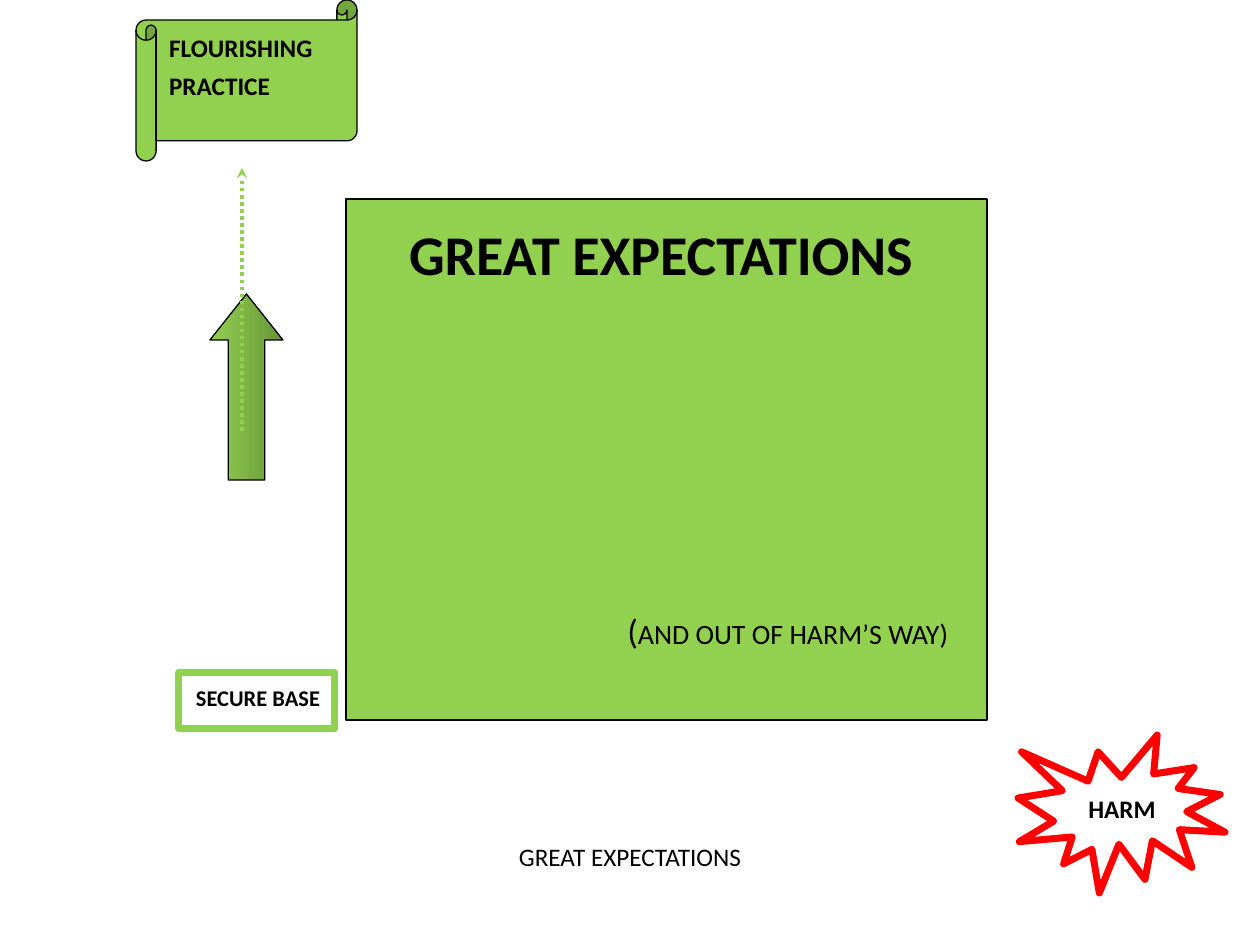
"""Build the Great Expectations slide: a path from a secure base to flourishing practice."""
from dataclasses import dataclass

from lxml.etree import SubElement
from pptx import Presentation
from pptx.dml.color import RGBColor
from pptx.enum.dml import MSO_LINE
from pptx.enum.shapes import MSO_CONNECTOR, MSO_SHAPE
from pptx.enum.text import MSO_ANCHOR, PP_ALIGN
from pptx.oxml.ns import qn
from pptx.util import Emu, Pt


@dataclass(frozen=True)
class Theme:
    font: str = "Calibri"
    green: str = "92D050"
    dark_green: str = "689539"
    red: str = "FF0000"
    white: str = "FFFFFF"
    black: str = "000000"
    title: int = 40
    bracket: int = 20
    label: int = 18
    base: int = 16
    thin: float = 0.75
    thick: int = 4
    dotted: int = 2


THEME = Theme()
EMU_PER_PX = 914400 / 126
SLIDE_SIZE = (1260, 945)
INSET = 13
AFTER = 10

BOLD_SMALL = {"bold": True, "small": True}
SMALL = {"bold": False, "small": True}
PLAIN = {"bold": False, "small": False}

SCROLL = {
    "kind": MSO_SHAPE.HORIZONTAL_SCROLL, "box": (136, 0, 221, 161),
    "fill": THEME.green, "line": (THEME.black, THEME.thin),
    "paragraphs": [{"runs": [("flourishing practice", THEME.label, BOLD_SMALL)]}],
}
SECURE_BASE = {
    "kind": MSO_SHAPE.RECTANGLE, "box": (179, 672, 156, 57),
    "fill": THEME.white, "line": (THEME.green, THEME.thick), "insets": (17, INSET),
    "paragraphs": [{"runs": [("secure base", THEME.base, BOLD_SMALL)]}],
}
UP_ARROW = {
    "kind": MSO_SHAPE.UP_ARROW, "box": (210, 294, 73, 186),
    "adjustments": (0.5, 0.63), "gradient": (THEME.green, THEME.dark_green),
    "line": (THEME.black, THEME.thin),
}
HARM = {
    "kind": MSO_SHAPE.EXPLOSION1, "box": (1018, 735, 207, 158),
    "fill": THEME.white, "line": (THEME.red, THEME.thick), "insets": (26, INSET),
    "paragraphs": [{"runs": [("harm", THEME.label, BOLD_SMALL)]}],
}
EXPECTATIONS = {
    "kind": MSO_SHAPE.RECTANGLE, "box": (346, 199, 641, 521),
    "fill": THEME.green, "line": (THEME.black, THEME.thin), "insets": (28, 39),
    "paragraphs": [
        {"runs": [("great expectations", THEME.title, BOLD_SMALL)],
         "align": PP_ALIGN.CENTER},
        {"runs": [("(", THEME.bracket, PLAIN),
                  ("and out of harm’s way)", THEME.bracket, SMALL)],
         "align": PP_ALIGN.RIGHT, "before": 173},
    ],
}
CAPTION = {
    "box": (410, 829, 504, 50), "insets": (109, INSET),
    "paragraphs": [{"runs": [("great expectations", THEME.label, SMALL)], "after": 0}],
}
DOTTED_ARROW = (242, 431, 242, 168)


def px(value):
    return Emu(round(value * EMU_PER_PX))


def color(code):
    return RGBColor.from_string(code)


def add_text(shape, item):
    frame = shape.text_frame
    frame.word_wrap = True
    frame.vertical_anchor = MSO_ANCHOR.TOP
    left, right = item.get("insets", (INSET, INSET))
    frame.margin_left, frame.margin_right = px(left), px(right)
    for index, content in enumerate(item["paragraphs"]):
        paragraph = frame.add_paragraph() if index else frame.paragraphs[0]
        paragraph.alignment = content.get("align", PP_ALIGN.LEFT)
        paragraph.space_before = Pt(content.get("before", 0))
        paragraph.space_after = Pt(content.get("after", AFTER))
        for text, size, style in content["runs"]:
            run = paragraph.add_run()
            run.text = text
            run.font.name = THEME.font
            run.font.size = Pt(size)
            run.font.bold = style["bold"]
            run.font.color.rgb = color(THEME.black)
            if style["small"]:
                run._r.get_or_add_rPr().set("cap", "small")


def add_figure(slide, item):
    shape = slide.shapes.add_shape(item["kind"], *map(px, item["box"]))
    shape.shadow.inherit = False
    for index, value in enumerate(item.get("adjustments", ())):
        shape.adjustments[index] = value
    if "gradient" in item:
        shape.fill.gradient()
        shape.fill.gradient_angle = 0
        for stop, code in zip(shape.fill.gradient_stops, item["gradient"]):
            stop.color.rgb = color(code)
    else:
        shape.fill.solid()
        shape.fill.fore_color.rgb = color(item["fill"])
    line_color, width = item["line"]
    shape.line.color.rgb = color(line_color)
    shape.line.width = Pt(width)
    if "paragraphs" in item:
        add_text(shape, item)


def add_dotted_arrow(slide):
    connector = slide.shapes.add_connector(MSO_CONNECTOR.STRAIGHT, *map(px, DOTTED_ARROW))
    connector.line.color.rgb = color(THEME.green)
    connector.line.width = Pt(THEME.dotted)
    connector.line.dash_style = MSO_LINE.ROUND_DOT
    SubElement(connector.line._get_or_add_ln(), qn("a:tailEnd"), type="stealth")
    SubElement(connector._element.spPr, qn("a:effectLst"))


def main():
    presentation = Presentation()
    presentation.slide_width, presentation.slide_height = map(px, SLIDE_SIZE)
    slide = presentation.slides.add_slide(presentation.slide_layouts[6])
    for item in (SCROLL, SECURE_BASE, UP_ARROW):
        add_figure(slide, item)
    add_dotted_arrow(slide)
    for item in (HARM, EXPECTATIONS):
        add_figure(slide, item)
    add_text(slide.shapes.add_textbox(*map(px, CAPTION["box"])), CAPTION)
    presentation.save("out.pptx")


if __name__ == "__main__":
    main()
